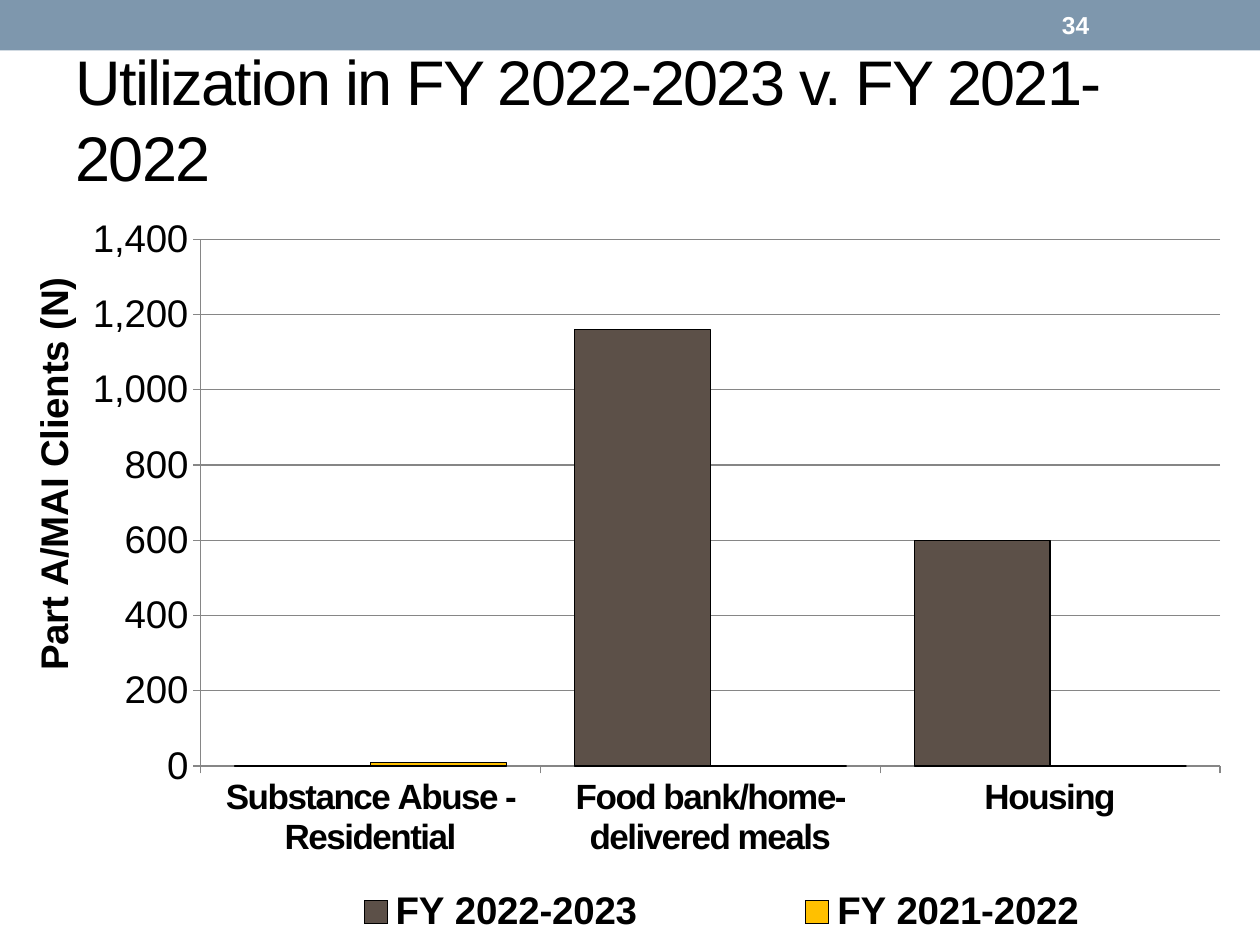
from dataclasses import dataclass
from typing import Optional

from lxml.etree import SubElement
from pptx import Presentation
from pptx.chart.data import CategoryChartData
from pptx.dml.color import RGBColor
from pptx.enum.chart import XL_CHART_TYPE, XL_LEGEND_POSITION, XL_TICK_MARK
from pptx.enum.shapes import MSO_SHAPE
from pptx.enum.text import MSO_ANCHOR, MSO_AUTO_SIZE, PP_ALIGN
from pptx.oxml.ns import qn
from pptx.util import Inches, Pt


@dataclass(frozen=True)
class Theme:
    font: str = "Arial"
    black: RGBColor = RGBColor(0, 0, 0)
    white: RGBColor = RGBColor(255, 255, 255)
    banner: RGBColor = RGBColor.from_string("7E97AD")
    grid: RGBColor = RGBColor.from_string("868686")
    title_size: int = 36
    number_size: int = 14
    chart_size: int = 22
    category_size: int = 20
    tight_spacing: str = "-100"


@dataclass(frozen=True)
class Box:
    left: float
    top: float
    width: float
    height: float

    def lengths(self) -> tuple:
        return tuple(Inches(value) for value in (self.left, self.top, self.width, self.height))


@dataclass(frozen=True)
class Share:
    x: float
    y: float
    w: Optional[float] = None
    h: Optional[float] = None


@dataclass(frozen=True)
class YearSeries:
    name: str
    values: tuple
    color: str


THEME = Theme()
CATEGORIES = ("Substance Abuse - Residential", "Food bank/home-delivered meals", "Housing")
YEARS = (
    YearSeries("FY 2022-2023", (0, 1160, 600), "5C5048"),
    YearSeries("FY 2021-2022", (10, 0, 0), "FFC000"),
)


def style_font(font, size: int, color: RGBColor = THEME.black, bold: bool = False) -> None:
    font.name = THEME.font
    font.size = Pt(size)
    font.color.rgb = color
    font.bold = bold


def tighten(font) -> None:
    font._rPr.set("spc", THEME.tight_spacing)


def place_part(element, share: Share, inner: bool = False) -> None:
    for old_layout in element.findall(qn("c:layout")):
        element.remove(old_layout)
    leading = [child for child in element if child.tag in (qn("c:legendPos"), qn("c:tx"))]
    layout = SubElement(element, qn("c:layout"))
    element.insert(len(leading), layout)
    manual = SubElement(layout, qn("c:manualLayout"))
    settings = [("layoutTarget", "inner")] if inner else []
    settings += [("xMode", "edge"), ("yMode", "edge")]
    settings += [(name, getattr(share, name)) for name in ("x", "y", "w", "h")]
    for name, value in settings:
        if value is not None:
            SubElement(manual, qn(f"c:{name}")).set("val", str(value))


def write_text(shape, text: str, size: int, color: RGBColor, bold: bool = False):
    frame = shape.text_frame
    frame.text = text
    frame.word_wrap = True
    frame.auto_size = MSO_AUTO_SIZE.NONE
    frame.vertical_anchor = MSO_ANCHOR.MIDDLE
    paragraph = frame.paragraphs[0]
    paragraph.alignment = PP_ALIGN.LEFT
    run = paragraph.runs[0]
    style_font(run.font, size, color, bold)
    return run


def add_banner(slide) -> None:
    banner = slide.shapes.add_shape(MSO_SHAPE.RECTANGLE, *Box(0, 0, 10, 0.4).lengths())
    banner.shadow.inherit = False
    banner.fill.solid()
    banner.fill.fore_color.rgb = THEME.banner
    banner.line.fill.background()
    number = slide.shapes.add_textbox(*Box(8.33, 0.02, 1.17, 0.36).lengths())
    write_text(number, "34", THEME.number_size, THEME.white, bold=True)


def add_title(slide) -> None:
    title = slide.shapes.title
    title.left, title.top, title.width, title.height = Box(0.5, 0.38, 9, 1.12).lengths()
    text = "Utilization in FY 2022-2023 v. FY 2021-2022"
    tighten(write_text(title, text, THEME.title_size, THEME.black).font)


def format_axes(chart) -> None:
    value_axis, category_axis = chart.value_axis, chart.category_axis
    for axis in (value_axis, category_axis):
        axis.major_tick_mark = XL_TICK_MARK.OUTSIDE
        axis.minor_tick_mark = XL_TICK_MARK.NONE
        axis.format.line.color.rgb = THEME.grid
    style_font(category_axis.tick_labels.font, THEME.category_size, bold=True)
    tighten(category_axis.tick_labels.font)
    label_body = category_axis._element.find(f"{qn('c:txPr')}/{qn('a:bodyPr')}")
    label_body.set("rot", "0")
    label_body.set("vert", "horz")
    style_font(value_axis.tick_labels.font, THEME.chart_size)
    value_axis.tick_labels.number_format = "#,##0"
    value_axis.tick_labels.number_format_is_linked = False
    value_axis.minimum_scale, value_axis.maximum_scale = 0, 1400
    value_axis.major_unit = 200
    value_axis.has_major_gridlines = True
    value_axis.major_gridlines.format.line.color.rgb = THEME.grid
    axis_title = value_axis.axis_title
    axis_title.text_frame.text = "Part A/MAI Clients (N)"
    run = axis_title.text_frame.paragraphs[0].runs[0]
    style_font(run.font, THEME.chart_size, bold=True)
    place_part(axis_title._element, Share(0.01, 0.12))


def add_chart(slide) -> None:
    data = CategoryChartData(number_format="General")
    data.categories = CATEGORIES
    for year in YEARS:
        data.add_series(year.name, year.values)
    frame = slide.shapes.add_chart(
        XL_CHART_TYPE.COLUMN_CLUSTERED, *Box(0.08, 1.42, 9.82, 6.06).lengths(), data
    )
    chart = frame.chart
    chart.has_title = False
    style_font(chart.font, THEME.chart_size)
    plot = chart.plots[0]
    plot.gap_width = 50
    plot.overlap = 0
    plot.vary_by_categories = False
    for series, year in zip(plot.series, YEARS):
        series.format.fill.solid()
        series.format.fill.fore_color.rgb = RGBColor.from_string(year.color)
        series.format.line.color.rgb = THEME.black
        series.format.line.width = Pt(0.75)
    format_axes(chart)
    chart.has_legend = True
    legend = chart.legend
    legend.position = XL_LEGEND_POSITION.BOTTOM
    legend.include_in_layout = False
    style_font(legend.font, THEME.chart_size, bold=True)
    place_part(legend._element, Share(0.16, 0.92, 0.83, 0.08))
    plot_area = chart._chartSpace.find(f".//{qn('c:plotArea')}")
    place_part(plot_area, Share(0.154, 0.079, 0.824, 0.69), inner=True)


def main() -> None:
    presentation = Presentation()
    presentation.slide_width, presentation.slide_height = Inches(10), Inches(7.5)
    slide = presentation.slides.add_slide(presentation.slide_layouts[5])
    add_banner(slide)
    add_title(slide)
    add_chart(slide)
    presentation.save("out.pptx")


if __name__ == "__main__":
    main()
